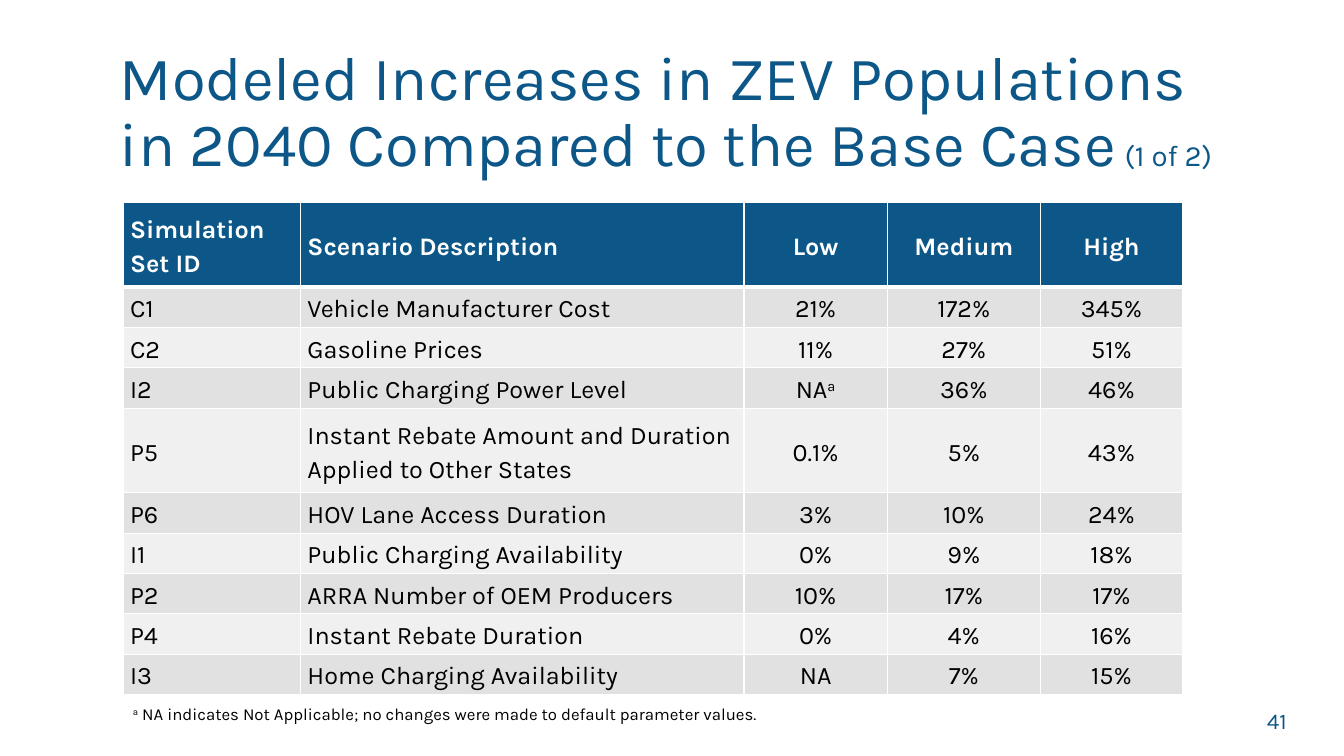
from dataclasses import dataclass

from pptx import Presentation
from pptx.dml.color import RGBColor
from pptx.enum.text import MSO_ANCHOR, PP_ALIGN
from pptx.oxml import parse_xml
from pptx.oxml.ns import nsdecls
from pptx.util import Inches, Pt

FONT = "Karla"
COLORS = {
    "blue": "0C5788",
    "white": "FFFFFF",
    "black": "000000",
    "band_dark": "E1E1E1",
    "band_light": "F0F0F0",
}


@dataclass
class Span:
    text: str
    size: float
    color: str = "black"
    bold: bool = False
    superscript: bool = False


@dataclass
class ParaStyle:
    align: PP_ALIGN = PP_ALIGN.LEFT
    line: float = 1.0
    before: float = 0
    after: float = 0


@dataclass
class TextBox:
    left: float
    top: float
    width: float
    height: float
    anchor: MSO_ANCHOR
    style: ParaStyle
    spans: list[Span]


@dataclass
class Scenario:
    set_id: str
    description: str
    low: str
    medium: str
    high: str
    low_note: str = ""

    def cell_texts(self) -> list[str]:
        return [self.set_id, self.description, self.low, self.medium, self.high]


HEADER = Scenario("Simulation Set ID", "Scenario Description", "Low", "Medium", "High")
SCENARIOS = [
    Scenario("C1", "Vehicle Manufacturer Cost", "21%", "172%", "345%"),
    Scenario("C2", "Gasoline Prices", "11%", "27%", "51%"),
    Scenario("I2", "Public Charging Power Level", "NA", "36%", "46%", low_note="a"),
    Scenario("P5", "Instant Rebate Amount and Duration Applied to Other States",
             "0.1%", "5%", "43%"),
    Scenario("P6", "HOV Lane Access Duration", "3%", "10%", "24%"),
    Scenario("I1", "Public Charging Availability", "0%", "9%", "18%"),
    Scenario("P2", "ARRA Number of OEM Producers", "10%", "17%", "17%"),
    Scenario("P4", "Instant Rebate Duration", "0%", "4%", "16%"),
    Scenario("I3", "Home Charging Availability", "NA", "7%", "15%"),
]
COL_WIDTHS = [1.76, 4.4, 1.42, 1.52, 1.41]
ROW_HEIGHT, TALL_ROW_HEIGHT = 0.4, 0.84
TALL_ROWS = {0, 4}
LOW_COL = 2

TITLE = TextBox(1.09, 0.4, 11.22, 1.45, MSO_ANCHOR.MIDDLE, ParaStyle(line=0.9), [
    Span("Modeled Increases in ZEV Populations in 2040 Compared to the Base Case", 44, "blue"),
    Span(" (1 of 2)", 21, "blue"),
])
PAGE_NUMBER = TextBox(9.42, 6.95, 3.44, 0.4, MSO_ANCHOR.MIDDLE,
                      ParaStyle(PP_ALIGN.RIGHT), [Span("41", 16, "blue")])
FOOTNOTE = TextBox(1.22, 6.9, 10.5, 0.31, MSO_ANCHOR.TOP, ParaStyle(line=1.15, before=6), [
    Span("a", 12, superscript=True),
    Span(" NA indicates Not Applicable; no changes were made to default parameter values.", 12),
])


def rgb(name: str) -> RGBColor:
    return RGBColor.from_string(COLORS[name])


def write(tf, spans: list[Span], style: ParaStyle) -> None:
    p = tf.paragraphs[0]
    p.alignment = style.align
    p.line_spacing = style.line
    p.space_before, p.space_after = Pt(style.before), Pt(style.after)
    for span in spans:
        r = p.add_run()
        r.text = span.text
        r.font.name = FONT
        r.font.size = Pt(span.size)
        r.font.bold = span.bold
        r.font.color.rgb = rgb(span.color)
        if span.superscript:
            r.font._element.set("baseline", "30000")


def add_text(s, box: TextBox) -> None:
    sp = s.shapes.add_textbox(Inches(box.left), Inches(box.top),
                              Inches(box.width), Inches(box.height))
    tf = sp.text_frame
    tf.word_wrap = True
    tf.vertical_anchor = box.anchor
    write(tf, box.spans, box.style)


def set_borders(cell, top: float, bottom: float) -> None:
    tc_pr = cell._tc.get_or_add_tcPr()
    widths = {"lnL": 1, "lnR": 1, "lnT": top, "lnB": bottom}
    for i, (tag, width) in enumerate(widths.items()):
        tc_pr.insert(i, parse_xml(
            f'<a:{tag} {nsdecls("a")} w="{Pt(width)}"><a:solidFill>'
            f'<a:srgbClr val="{COLORS["white"]}"/></a:solidFill></a:{tag}>'))


def add_scenario_table(s) -> None:
    rows = [HEADER, *SCENARIOS]
    heights = [TALL_ROW_HEIGHT if i in TALL_ROWS else ROW_HEIGHT for i in range(len(rows))]
    table = s.shapes.add_table(len(rows), len(COL_WIDTHS), Inches(1.22), Inches(2.01),
                               Inches(sum(COL_WIDTHS)), Inches(sum(heights))).table
    for column, width in zip(table.columns, COL_WIDTHS):
        column.width = Inches(width)

    for i, (scenario, height) in enumerate(zip(rows, heights)):
        table.rows[i].height = Inches(height)
        is_header = i == 0
        fill = "blue" if is_header else "band_dark" if i % 2 else "band_light"
        color = "white" if is_header else "black"
        for j, text in enumerate(scenario.cell_texts()):
            cell = table.cell(i, j)
            cell.fill.solid()
            cell.fill.fore_color.rgb = rgb(fill)
            cell.vertical_anchor = MSO_ANCHOR.MIDDLE
            cell.margin_left = cell.margin_right = Inches(0.07)
            cell.margin_top = cell.margin_bottom = 0
            spans = [Span(text, 18, color, bold=is_header)]
            if j == LOW_COL and scenario.low_note:
                spans.append(Span(scenario.low_note, 18, color, superscript=True))
            align = PP_ALIGN.CENTER if j >= LOW_COL else PP_ALIGN.LEFT
            write(cell.text_frame, spans, ParaStyle(align, 1.15, 6, 6))
            set_borders(cell, top=3 if i == 1 else 1, bottom=3 if is_header else 1)


def main() -> None:
    prs = Presentation()
    prs.slide_width, prs.slide_height = Inches(13.33), Inches(7.5)
    s = prs.slides.add_slide(prs.slide_layouts[6])

    # Title and page number
    add_text(s, TITLE)
    add_text(s, PAGE_NUMBER)

    # Scenario results with footnote
    add_scenario_table(s)
    add_text(s, FOOTNOTE)

    prs.save("out.pptx")


if __name__ == "__main__":
    main()
